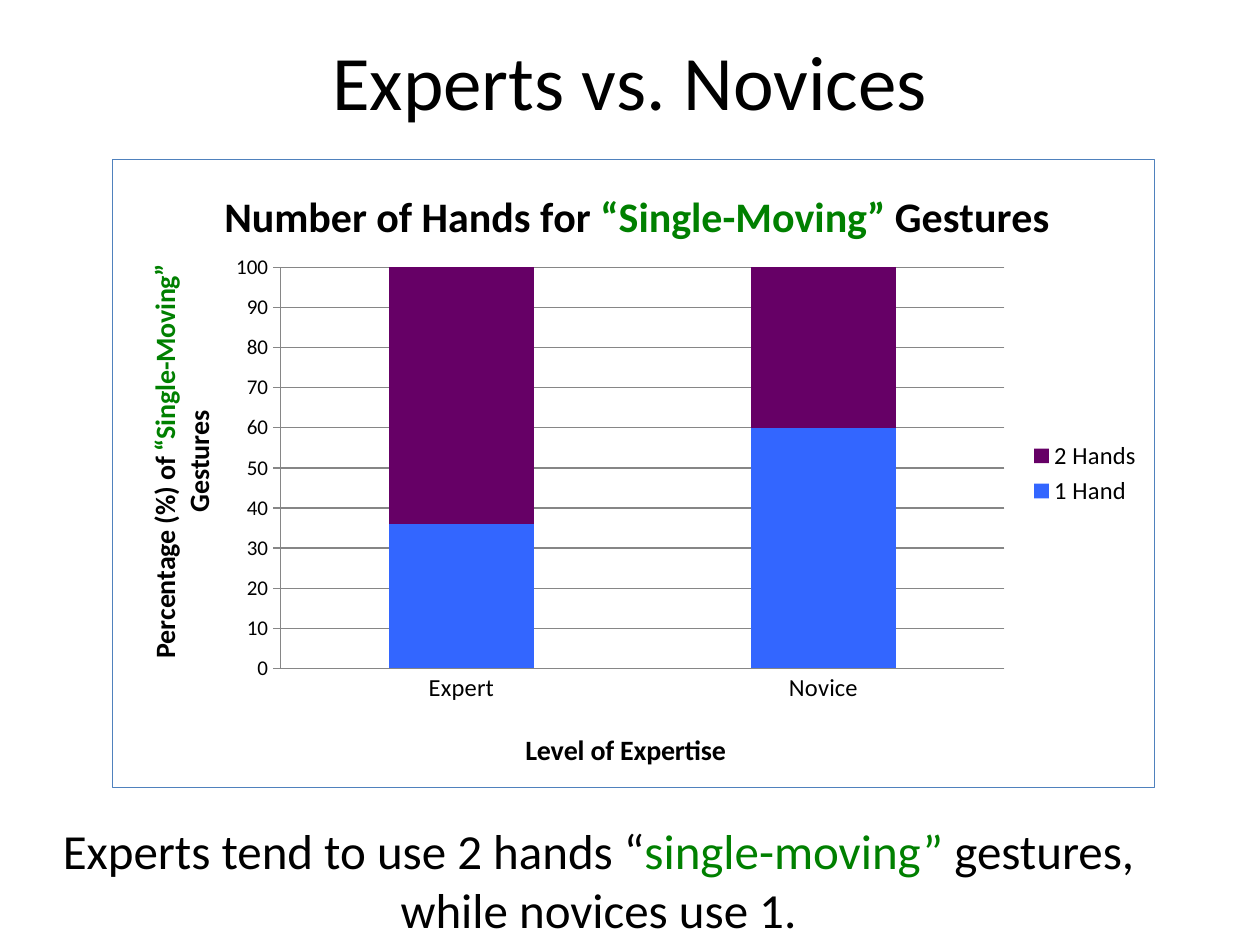
import pptx
import pptx.chart.data
import pptx.dml.color
import pptx.enum.chart
import pptx.enum.text
import pptx.oxml
import pptx.oxml.ns
import pptx.util

SCALE = 914400 / 126
FONT = "Calibri"
COLORS = {
    "text": "000000",
    "highlight": "008000",
    "one_hand": "3366FF",
    "two_hands": "660066",
    "grid": "868686",
    "border": "4F81BD",
}
CHART_BOX = (112, 159, 1043, 629)


def px(length):
    """Turn a length in px into EMU."""
    return pptx.util.Emu(round(length * SCALE))


def color(name):
    """Return a named colour as an RGB value."""
    return pptx.dml.color.RGBColor.from_string(COLORS[name])


def set_font(font, size, color_name="text", bold=False):
    """Apply the slide's typeface with a size, colour and weight."""
    font.name = FONT
    font.size = pptx.util.Pt(size)
    font.bold = bold
    font.color.rgb = color(color_name)


def write_text(text_frame, parts, size, bold=False):
    """Write one centred paragraph from pairs of text and colour name."""
    paragraph = text_frame.paragraphs[0]
    paragraph.alignment = pptx.enum.text.PP_ALIGN.CENTER
    for text, color_name in parts:
        run = paragraph.add_run()
        run.text = text
        set_font(run.font, size, color_name, bold)


def add_text(slide, box, parts, size, anchor):
    """Add a wrapping text box."""
    text_frame = slide.shapes.add_textbox(*map(px, box)).text_frame
    text_frame.word_wrap = True
    text_frame.vertical_anchor = anchor
    write_text(text_frame, parts, size)


def make_layout(left, top, width=None, height=None):
    """Build a manual chart layout from px positions on the slide."""
    chart_left, chart_top, chart_width, chart_height = CHART_BOX
    values = {
        "xMode": "edge",
        "yMode": "edge",
        "x": round((left - chart_left) / chart_width, 4),
        "y": round((top - chart_top) / chart_height, 4),
    }
    target = ""
    if width:
        target = '<c:layoutTarget val="inner"/>'
        values["w"] = round(width / chart_width, 4)
        values["h"] = round(height / chart_height, 4)
    items = "".join(f'<c:{key} val="{value}"/>' for key, value in values.items())
    return pptx.oxml.parse_xml(
        f'<c:layout {pptx.oxml.ns.nsdecls("c")}><c:manualLayout>'
        f"{target}{items}</c:manualLayout></c:layout>"
    )


def set_title(owner, parts, size, left, top, rotation=None):
    """Give a chart or an axis a bold title at a px position."""
    owner.has_title = True
    title = owner.chart_title if hasattr(owner, "chart_title") else owner.axis_title
    write_text(title.text_frame, parts, size, bold=True)
    element = title._element
    for layout in element.findall(pptx.oxml.ns.qn("c:layout")):
        element.remove(layout)
    text_element = element.find(pptx.oxml.ns.qn("c:tx"))
    text_element.addnext(make_layout(left, top))
    if rotation is not None:
        body = next(text_element.iter(pptx.oxml.ns.qn("a:bodyPr")))
        body.set("rot", str(rotation))
        body.set("vert", "horz")


def set_border(chart):
    """Draw the thin outline around the chart."""
    outline = pptx.oxml.parse_xml(
        f'<c:spPr {pptx.oxml.ns.nsdecls("c", "a")}><a:noFill/><a:ln w="9525">'
        f'<a:solidFill><a:srgbClr val="{COLORS["border"]}"/></a:solidFill>'
        "</a:ln></c:spPr>"
    )
    chart._chartSpace.find(pptx.oxml.ns.qn("c:chart")).addnext(outline)


def set_line(line):
    """Style an axis line or a gridline."""
    line.color.rgb = color("grid")
    line.width = pptx.util.Pt(0.75)


def format_axes(chart):
    """Set scale, ticks, lines, labels and titles of both axes."""
    tick_mark = pptx.enum.chart.XL_TICK_MARK
    category_axis, value_axis = chart.category_axis, chart.value_axis
    for axis, size, mark in (
        (category_axis, 14, tick_mark.NONE),
        (value_axis, 12, tick_mark.CROSS),
    ):
        axis.major_tick_mark = mark
        axis.minor_tick_mark = tick_mark.NONE
        set_font(axis.tick_labels.font, size)
        set_line(axis.format.line)
    value_axis.minimum_scale = 0
    value_axis.maximum_scale = 100
    value_axis.major_unit = 10
    value_axis.tick_labels.number_format = "0"
    value_axis.tick_labels.number_format_is_linked = False
    value_axis.has_major_gridlines = True
    set_line(value_axis.major_gridlines.format.line)
    set_title(category_axis, [("Level of Expertise", "text")], 16, 520, 727)
    set_title(
        value_axis,
        [
            ("Percentage (%) of ", "text"),
            ("“Single-Moving” ", "highlight"),
            ("Gestures", "text"),
        ],
        16, 142, 260, rotation=-5400000,
    )


def add_hands_chart(slide):
    """Add the stacked column chart of hands by level of expertise."""
    data = pptx.chart.data.CategoryChartData(number_format="0")
    data.categories = ["Expert", "Novice"]
    data.add_series("1 Hand", [36, 60])
    data.add_series("2 Hands", [64, 40])
    chart_type = pptx.enum.chart.XL_CHART_TYPE.COLUMN_STACKED
    chart = slide.shapes.add_chart(chart_type, *map(px, CHART_BOX), data).chart
    set_font(chart.font, 10)
    set_border(chart)
    set_title(
        chart,
        [
            ("Number of Hands for ", "text"),
            ("“Single-Moving” ", "highlight"),
            ("Gestures", "text"),
        ],
        24, 220, 186,
    )
    plot = chart.plots[0]
    plot.gap_width = 150
    plot.overlap = 100
    plot.vary_by_categories = False
    for series, color_name in zip(plot.series, ("one_hand", "two_hands")):
        series.format.fill.solid()
        series.format.fill.fore_color.rgb = color(color_name)
    format_axes(chart)
    chart.has_legend = True
    chart.legend.position = pptx.enum.chart.XL_LEGEND_POSITION.RIGHT
    chart.legend.include_in_layout = False
    set_font(chart.legend.font, 14)
    plot_area = chart._chartSpace.chart.plotArea
    for layout in plot_area.findall(pptx.oxml.ns.qn("c:layout")):
        plot_area.remove(layout)
    plot_area.insert(0, make_layout(280, 267, 725, 402))


def main():
    """Build the slide and save it."""
    presentation = pptx.Presentation()
    presentation.slide_width = px(1260)
    presentation.slide_height = px(945)
    slide = presentation.slides.add_slide(presentation.slide_layouts[6])
    anchor = pptx.enum.text.MSO_ANCHOR
    add_text(slide, (63, 1, 1134, 158), [("Experts vs. Novices", "text")], 44, anchor.MIDDLE)
    caption = [
        ("Experts tend to use 2 hands “", "text"),
        ("single-moving” ", "highlight"),
        ("gestures, while novices use 1.", "text"),
    ]
    add_text(slide, (0, 814, 1197, 131), caption, 28, anchor.TOP)
    add_hands_chart(slide)
    presentation.save("out.pptx")


if __name__ == "__main__":
    main()
